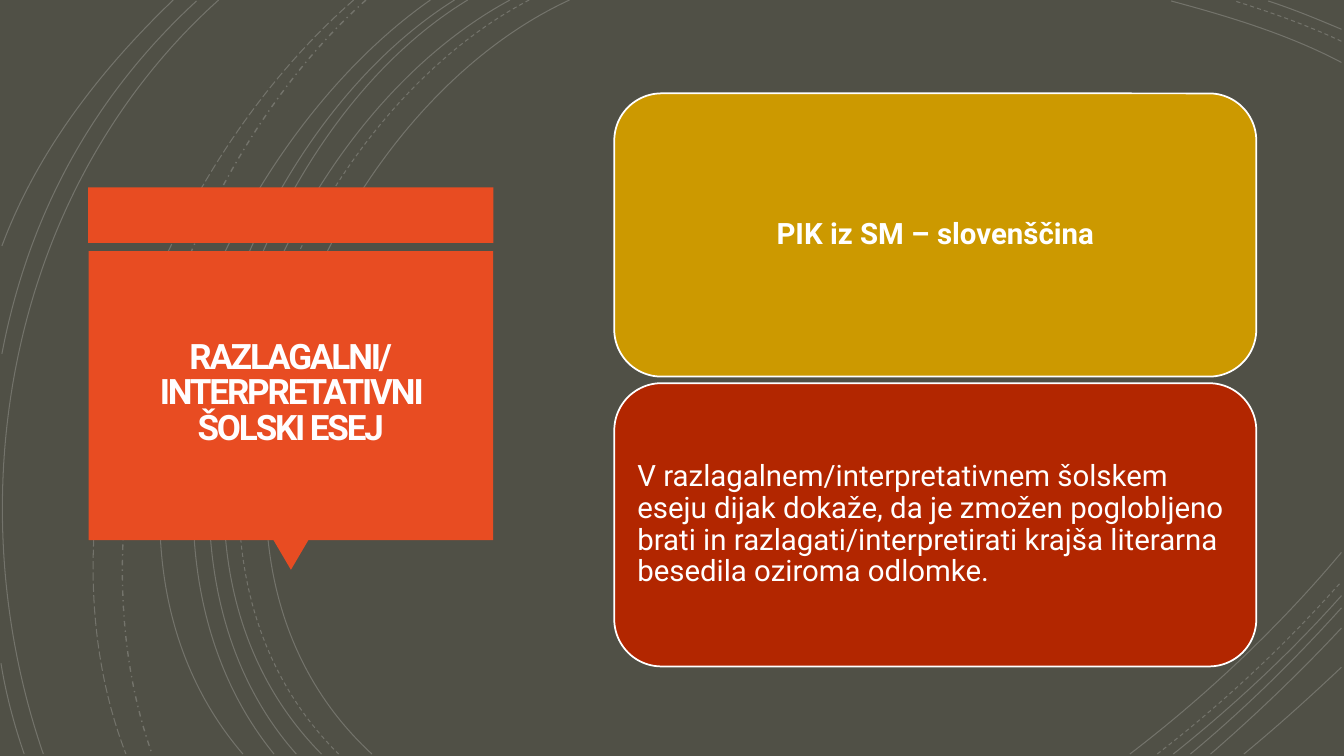
from dataclasses import dataclass

from lxml import etree
from pptx import Presentation
from pptx import util as u
from pptx.dml import color
from pptx.enum import dml, shapes, text
from pptx.oxml import ns

Point = tuple[float, float]
DASH = dml.MSO_LINE.DASH
DASH_DOT = dml.MSO_LINE.DASH_DOT
LONG_DASH = dml.MSO_LINE.LONG_DASH
SHAPE = shapes.MSO_SHAPE
CENTER, LEFT = text.PP_ALIGN.CENTER, text.PP_ALIGN.LEFT

WIDTH, HEIGHT = 960, 540
FLOOR = 538.6
EDGE = 958.2
BACKGROUND, WHITE, ORANGE = "505046", "FFFFFF", "E84C22"
ARC_OPACITY = 20


@dataclass(frozen=True)
class Arc:
    """A cubic curve from start to end, pulled by two control points."""
    start: Point
    pull_start: Point
    pull_end: Point
    end: Point
    dash: dml.MSO_LINE | None = None
    weight: float = 0.75


@dataclass(frozen=True)
class Block:
    left: float
    top: float
    width: float
    height: float
    fill: str
    kind: shapes.MSO_SHAPE = SHAPE.RECTANGLE
    rotation: float = 0
    border: float = 0


@dataclass(frozen=True)
class Label:
    lines: tuple[str, ...]
    size: float
    inset: float
    line_spacing: float = 0.9
    align: text.PP_ALIGN = CENTER
    bold: bool = True
    tracking: float = 0
    color: str = WHITE


LEFT_ARCS = [
    Arc((406.8, 0), (226.8, 82.8), (103, 388.8), (265.7, FLOOR)),
    Arc((378, 0), (205.2, 90), (88.6, 386.6), (241.9, FLOOR), DASH),
    Arc((364.3, 0), (194.4, 91.4), (79.2, 386.6), (229.7, FLOOR)),
    Arc((334.1, 0), (175.7, 95.8), (79.2, 389.5), (211.7, FLOOR)),
    Arc((324.7, 0), (166.3, 99.4), (69.8, 383.8), (195.8, FLOOR)),
    Arc((307.4, 0), (156.2, 105.8), (38.2, 380.9), (173.5, FLOOR)),
    Arc((261.4, 0), (126.7, 119.5), (46.8, 366.5), (108.7, FLOOR), DASH_DOT, 1),
    Arc((252.7, 0), (113, 121.7), (20.9, 359.3), (90, FLOOR), LONG_DASH),
    Arc((156.2, 0), (7.9, 133.2), (-33.1, 352.8), (31, FLOOR)),
    Arc((140.4, 0.7), (66.2, 69.1), (20.2, 154.1), (1.4, 252.7)),
    Arc((0.7, 473.8), (4.3, 496.1), (10.1, 517.7), (17.3, FLOOR)),
    Arc((123.8, 0), (72, 49.7), (26.6, 108), (1.4, 175.7)),
]
TOP_RIGHT_ARCS = [
    Arc((EDGE, 44.6), (920.2, 24.5), (877, 11.5), (836.6, 0.7)),
    Arc((EDGE, 29.5), (933.8, 18), (907.2, 8.6), (882, 0.7), DASH),
    Arc((EDGE, 20.9), (941, 13.7), (923.8, 6.5), (905.8, 0.7)),
]
BOTTOM_RIGHT_ARCS = [
    Arc((807.1, FLOOR), (861.8, 496.8), (913.7, 447.8), (EDGE, 394.6)),
    Arc((826.6, FLOOR), (873.4, 502.6), (918, 460.8), (EDGE, 415.4), DASH),
    Arc((838.1, FLOOR), (880.6, 504.7), (921.6, 466.6), (EDGE, 425.5)),
    Arc((850.3, FLOOR), (888.5, 506.9), (924.5, 471.6), (EDGE, 434.2)),
    Arc((864.7, FLOOR), (897.1, 510.5), (928.8, 480.2), (EDGE, 448.6)),
    Arc((888.5, FLOOR), (912.2, 519.1), (935.3, 498.2), (EDGE, 476.6)),
]

TITLE_BLOCKS = [
    Block(63, 133.9, 289.4, 39.6, ORANGE),
    Block(195.3, 385.7, 25, 21.3, ORANGE, SHAPE.ISOSCELES_TRIANGLE, 180),
    Block(63.4, 179.3, 288.9, 206.5, ORANGE),
]
TITLE_BOX = (69.8, 184.8, 275.8, 193.7)
TITLE = Label(("RAZLAGALNI/", "INTERPRETATIVNI ŠOLSKI ESEJ"), 25, 18, 0.85,
              tracking=-1.5, color="FFFEFF")

CARD_TOP, CARD_PITCH = 66.7, 207
CARDS = [
    ("CC9900", Label(("PIK iz SM – slovenščina",), 21, 6.6)),
    ("B22600", Label(("V razlagalnem/interpretativnem šolskem eseju dijak dokaže, da je "
                      "zmožen poglobljeno brati in razlagati/interpretirati krajša "
                      "literarna besedila oziroma odlomke.",), 21, 6.6,
                     align=LEFT, bold=False)),
]


def rgb(value: str) -> color.RGBColor:
    return color.RGBColor.from_string(value)


def apply(target, formats: dict) -> None:
    for name, value in formats.items():
        setattr(target, name, value)


def draw_arc(slide, arc: Arc) -> None:
    """Lay out the four points as a path, then turn its three steps into one curve."""
    points = [tuple(u.Pt(v) for v in point)
              for point in (arc.start, arc.pull_start, arc.pull_end, arc.end)]
    builder = slide.shapes.build_freeform(*points[0])
    builder.add_line_segments(points[1:], close=False)
    curve = builder.convert_to_shape()
    outline = curve._element.spPr.find(f".//{ns.qn('a:path')}")
    steps = outline.findall(ns.qn("a:lnTo"))
    bezier = etree.SubElement(outline, ns.qn("a:cubicBezTo"))
    for step in steps:
        bezier.append(step[0])
        outline.remove(step)

    curve.shadow.inherit = False
    curve.fill.background()
    curve.line.color.rgb = rgb(WHITE)
    apply(curve.line, {"width": u.Pt(arc.weight), "dash_style": arc.dash})
    ink = curve._element.spPr.find(f"{ns.qn('a:ln')}//{ns.qn('a:srgbClr')}")
    etree.SubElement(ink, ns.qn("a:alpha"), val=str(ARC_OPACITY * 1000))


def draw_block(slide, block: Block):
    box = (u.Pt(v) for v in (block.left, block.top, block.width, block.height))
    shape = slide.shapes.add_shape(block.kind, *box)
    shape.shadow.inherit = False
    shape.rotation = block.rotation
    shape.fill.solid()
    shape.fill.fore_color.rgb = rgb(block.fill)
    if block.border:
        shape.line.color.rgb = rgb(WHITE)
        shape.line.width = u.Pt(block.border)
    else:
        shape.line.fill.background()
    return shape


def write_label(shape, label: Label) -> None:
    frame = shape.text_frame
    sides = ("left", "right", "top", "bottom")
    apply(frame, {f"margin_{side}": u.Pt(label.inset) for side in sides})
    apply(frame, {"word_wrap": True, "vertical_anchor": text.MSO_ANCHOR.MIDDLE})
    paragraph = frame.paragraphs[0]
    apply(paragraph, {"alignment": label.align, "line_spacing": label.line_spacing})
    for number, line in enumerate(label.lines):
        if number:
            paragraph.add_line_break()
        run = paragraph.add_run()
        run.text = line
        apply(run.font, {"name": "Roboto", "size": u.Pt(label.size), "bold": label.bold})
        run.font.color.rgb = rgb(label.color)
        if label.tracking:
            run._r.get_or_add_rPr().set("spc", str(round(label.tracking * 100)))


def main() -> None:
    deck = Presentation()
    apply(deck, {"slide_width": u.Pt(WIDTH), "slide_height": u.Pt(HEIGHT)})
    slide = deck.slides.add_slide(deck.slide_layouts[6])
    slide.background.fill.solid()
    slide.background.fill.fore_color.rgb = rgb(BACKGROUND)

    for arc in LEFT_ARCS + TOP_RIGHT_ARCS + BOTTOM_RIGHT_ARCS:
        draw_arc(slide, arc)
    for block in TITLE_BLOCKS:
        draw_block(slide, block)
    write_label(slide.shapes.add_textbox(*(u.Pt(v) for v in TITLE_BOX)), TITLE)

    for row, (fill, label) in enumerate(CARDS):
        card = Block(438.8, CARD_TOP + row * CARD_PITCH, 458.6, 202.3, fill,
                     SHAPE.ROUNDED_RECTANGLE, border=1.25)
        write_label(draw_block(slide, card), label)

    deck.save("out.pptx")


if __name__ == "__main__":
    main()
